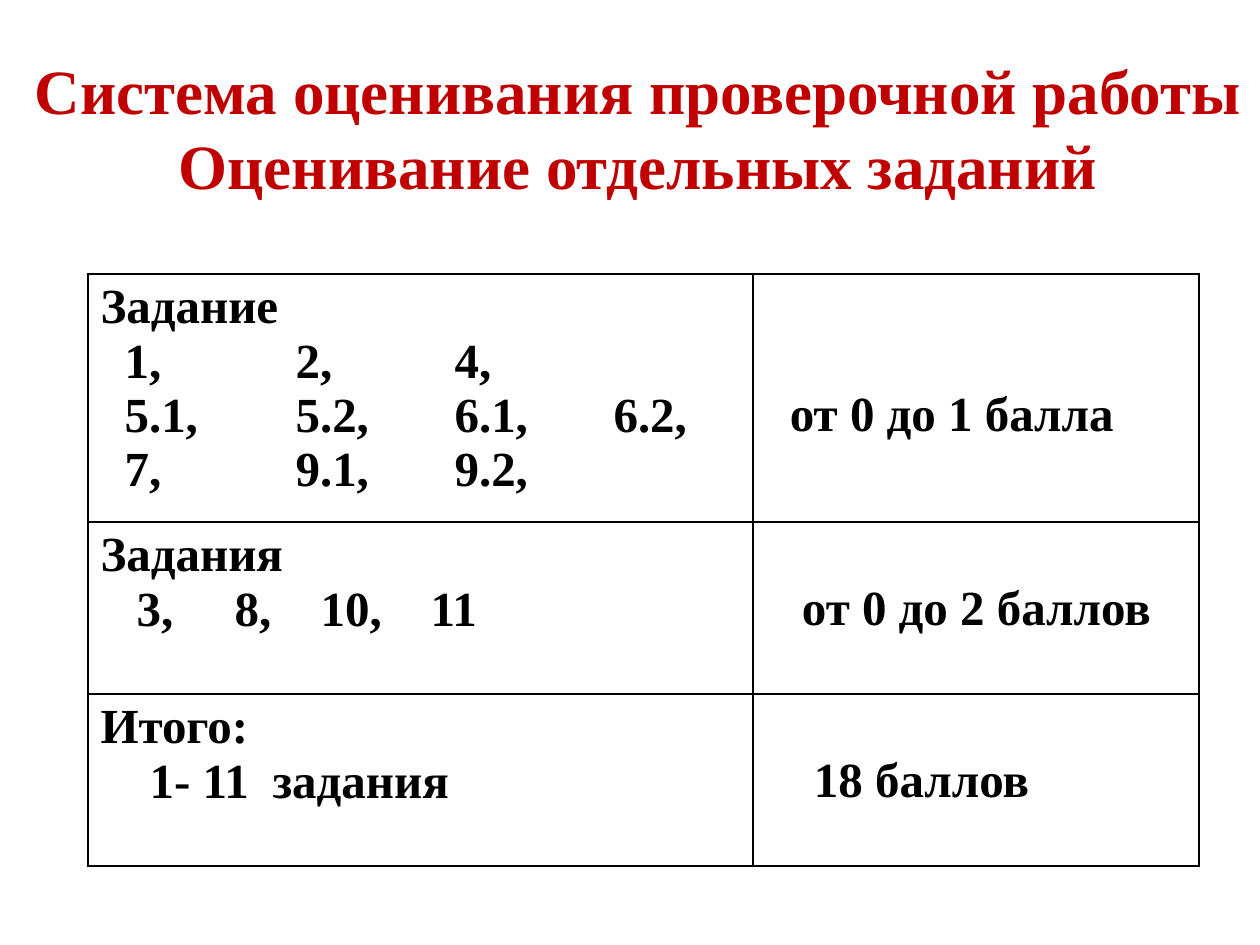
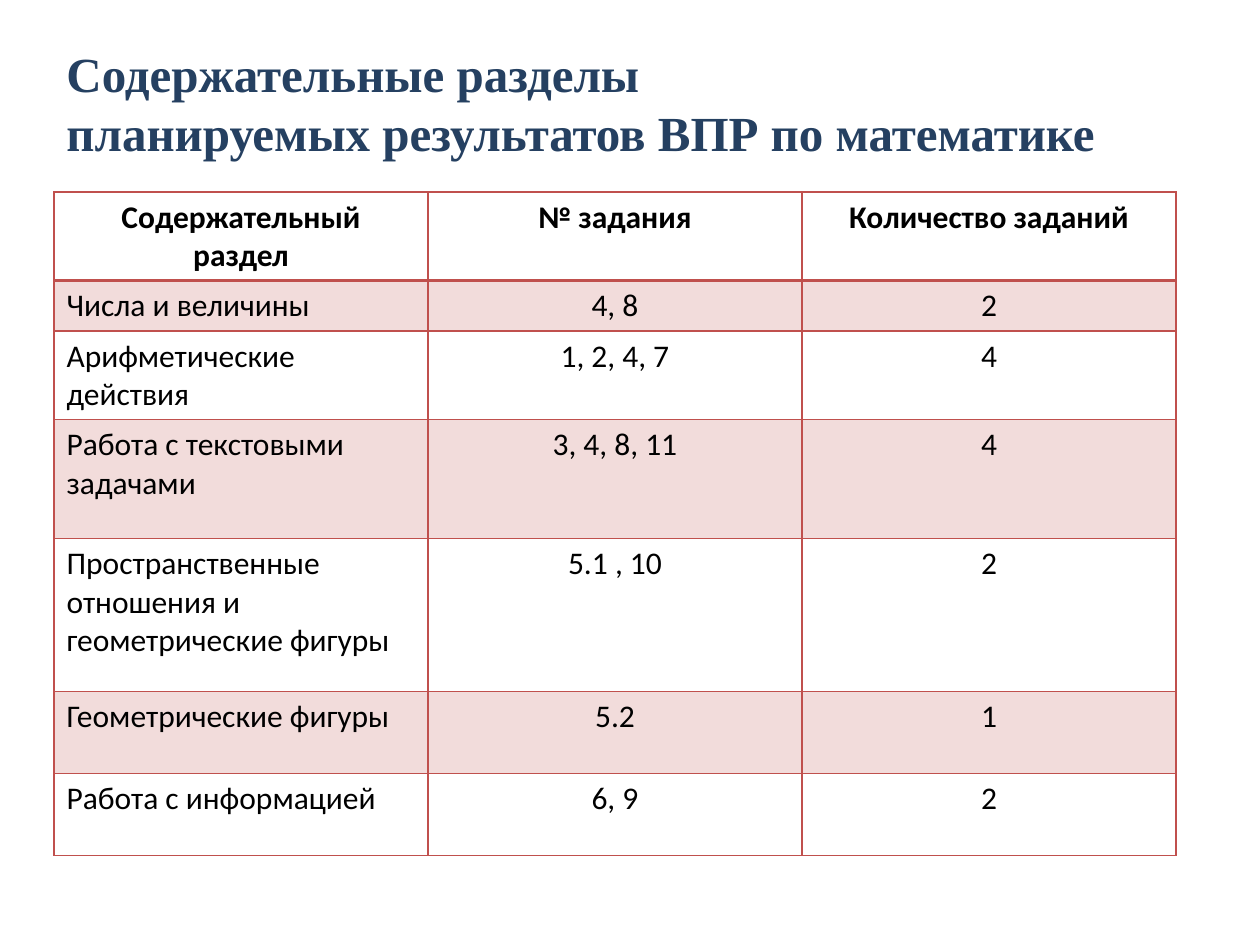
import pptx
import pptx.dml.color
import pptx.enum.text
import pptx.oxml.ns
import pptx.util
from lxml import etree

PX = 914400 / 126  # EMU in one px
RED = pptx.dml.color.RGBColor(0xC0, 0x00, 0x00)
NAVY = pptx.dml.color.RGBColor(0x25, 0x40, 0x61)
BLACK = pptx.dml.color.RGBColor(0x00, 0x00, 0x00)
BRICK = pptx.dml.color.RGBColor(0xC0, 0x50, 0x4D)
PINK = pptx.dml.color.RGBColor(0xF2, 0xDC, 0xDB)
SERIF, SANS = "Times New Roman", "Calibri"
LEFT, CENTER = pptx.enum.text.PP_ALIGN.LEFT, pptx.enum.text.PP_ALIGN.CENTER
qn = pptx.oxml.ns.qn


def write_lines(frame, lines, font, size, color, bold, alignment):
    frame.text = "\n".join(lines)
    for paragraph in frame.paragraphs:
        paragraph.alignment = alignment
        paragraph.font.name = font
        paragraph.font.size = pptx.util.Pt(size)
        paragraph.font.color.rgb = color
        paragraph.font.bold = bold


def add_grid(slide, left, top, widths, heights, color, header_rule):
    frame = slide.shapes.add_table(
        len(heights), len(widths), round(left * PX), round(top * PX),
        round(sum(widths) * PX), round(sum(heights) * PX))
    table = frame.table
    table.first_row = table.horz_banding = False
    for column, width in zip(table.columns, widths):
        column.width = round(width * PX)
    for index, height in enumerate(heights):
        table.rows[index].height = round(height * PX)
        for cell in table.rows[index].cells:
            cell.fill.background()
            properties = cell._tc.get_or_add_tcPr()
            points = {"L": 1, "R": 1,
                      "T": header_rule if index == 1 else 1,
                      "B": header_rule if index == 0 else 1}
            for position, (side, width) in enumerate(points.items()):
                line = etree.Element(qn(f"a:ln{side}"), w=str(pptx.util.Pt(width)))
                fill = etree.SubElement(line, qn("a:solidFill"))
                etree.SubElement(fill, qn("a:srgbClr"), val=str(color))
                properties.insert(position, line)
    return table


presentation = pptx.Presentation()
presentation.slide_width = round(1260 * PX)
presentation.slide_height = round(945 * PX)

# Slides with their titles: box in px, font size, colour, alignment, lines
titles = [
    ((16, 45, 1244, 165), 36, RED, CENTER,
     ["Система оценивания проверочной работы", "Оценивание отдельных заданий"]),
    ((54, 37, 1065, 131), 28, NAVY, LEFT,
     ["Содержательные разделы", "планируемых результатов ВПР по математике"]),
]
slides = []
for box, size, color, alignment, lines in titles:
    slide = presentation.slides.add_slide(presentation.slide_layouts[6])
    title = slide.shapes.add_textbox(*[round(length * PX) for length in box])
    title.text_frame.word_wrap = False
    title.text_frame.auto_size = pptx.enum.text.MSO_AUTO_SIZE.SHAPE_TO_FIT_TEXT
    write_lines(title.text_frame, lines, SERIF, size, color, True, alignment)
    slides.append(slide)
scoring_slide, sections_slide = slides

# Scoring table: task lines, their tab stops, score, its left and top margins
scores = [
    (["Задание", "\t1,\t2,\t4,", "\t5.1,\t5.2,\t6.1,\t6.2,", "\t7,\t9.1,\t9.2,"],
     [24, 195, 354, 513], "от 0 до 1 балла", 37, 114),
    (["Задания", "\t3,\t8,\t10,\t11"],
     [36, 134, 220, 330], "от 0 до 2 баллов", 49, 60),
    (["Итого:", "\t1- 11\tзадания"],
     [49, 172], "18 баллов", 61, 60),
]
table = add_grid(scoring_slide, 88, 274, [665, 446], [248, 172, 172], BLACK, 1)
for row, (tasks, stops, score, margin_left, margin_top) in zip(table.rows, scores):
    task_cell, score_cell = row.cells
    write_lines(task_cell.text_frame, tasks, SERIF, 28, BLACK, True, LEFT)
    for paragraph in task_cell.text_frame.paragraphs[1:]:
        properties = paragraph._p.get_or_add_pPr()
        tabs = etree.Element(qn("a:tabLst"))
        for stop in stops:
            etree.SubElement(tabs, qn("a:tab"), pos=str(round(stop * PX)), algn="l")
        properties.find(qn("a:defRPr")).addprevious(tabs)
    write_lines(score_cell.text_frame, [score], SERIF, 28, BLACK, True, LEFT)
    score_cell.margin_left = round(margin_left * PX)
    score_cell.margin_top = round(margin_top * PX)

# Content sections table: section, task numbers, task count
sections = [
    ("Содержательный\nраздел", "№ задания", "Количество заданий"),
    ("Числа и величины", "4, 8", "2"),
    ("Арифметические действия", "1, 2, 4, 7", "4"),
    ("Работа с текстовыми задачами", "3, 4, 8, 11", "4"),
    ("Пространственные отношения и геометрические фигуры", "5.1 , 10", "2"),
    ("Геометрические фигуры", "5.2", "1"),
    ("Работа с информацией", "6, 9", "2"),
]
table = add_grid(sections_slide, 54, 192, [374] * 3,
                 [88, 51, 88, 119, 153, 82, 82], BRICK, 2)
for row_index, section in enumerate(sections):
    header = row_index == 0
    for column_index, text in enumerate(section):
        cell = table.cell(row_index, column_index)
        alignment = CENTER if header or column_index > 0 else LEFT
        write_lines(cell.text_frame, text.split("\n"), SANS, 18, BLACK, header, alignment)
        if row_index % 2:
            cell.fill.solid()
            cell.fill.fore_color.rgb = PINK

presentation.save("out.pptx")
